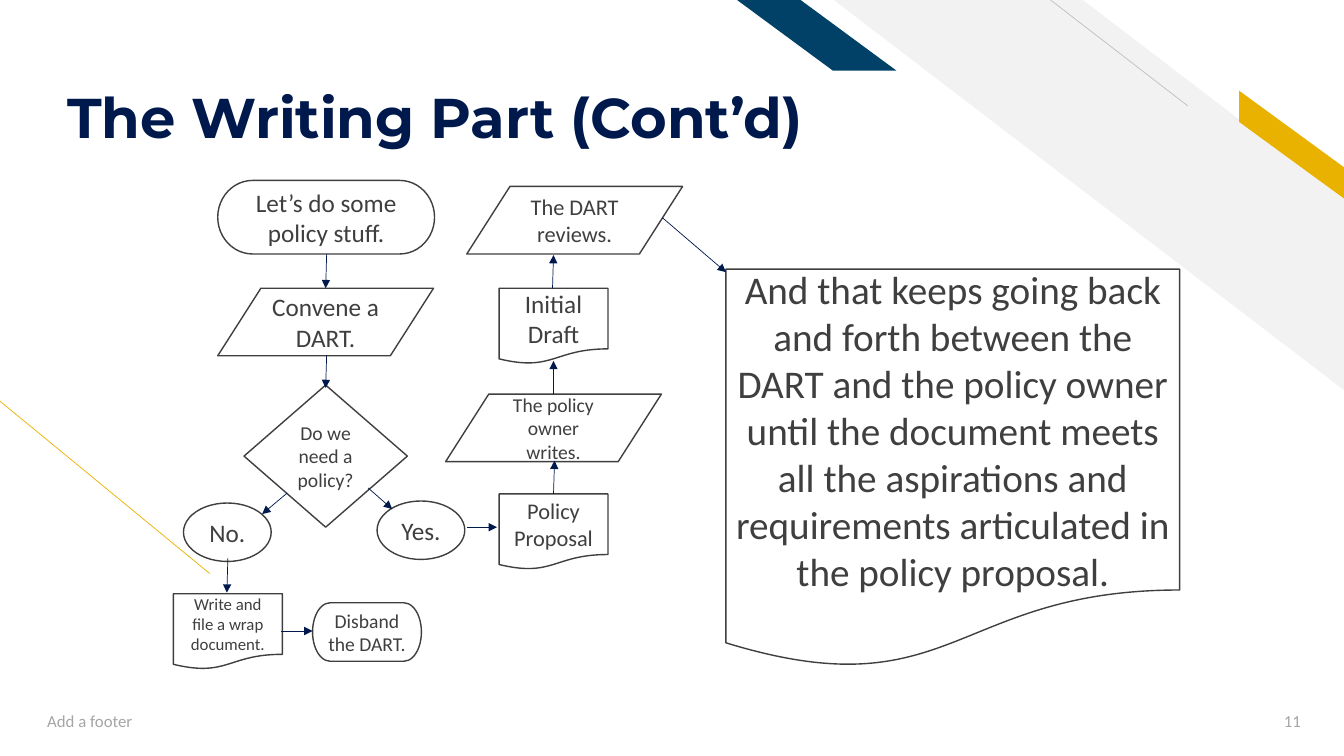
"""Build the policy-writing flowchart slide."""
from dataclasses import dataclass

from lxml.etree import SubElement
from pptx import Presentation
from pptx.dml.color import RGBColor
from pptx.enum.shapes import MSO_CONNECTOR, MSO_SHAPE
from pptx.enum.text import MSO_ANCHOR, PP_ALIGN
from pptx.oxml.ns import qn
from pptx.util import Emu, Pt


@dataclass(frozen=True)
class Theme:
    white: str = "FFFFFF"
    navy: str = "00194C"
    blue: str = "014067"
    gold: str = "EAB200"
    pale: str = "F2F2F2"
    rule: str = "BFBFBF"
    ink: str = "3F3F3F"
    muted: str = "A5A5A5"
    heading: str = "Montserrat"
    body: str = "Calibri"
    title_size: int = 40
    huge: int = 28
    large: int = 18
    medium: int = 16
    small: int = 14
    tiny: int = 12


theme = Theme()
PX = 9144


def write(shape, text, size, color, alignment, anchor=MSO_ANCHOR.MIDDLE, name=theme.body):
    frame = shape.text_frame
    frame.word_wrap = True
    frame.vertical_anchor = anchor
    paragraph = frame.paragraphs[0]
    paragraph.text = text
    paragraph.alignment = alignment
    paragraph.font.name = name
    paragraph.font.size = Pt(size)
    paragraph.font.color.rgb = RGBColor.from_string(color)
    return paragraph


def draw_line(start, end, color, arrow=False):
    points = [Emu(value * PX) for value in (*start, *end)]
    connector = slide.shapes.add_connector(MSO_CONNECTOR.STRAIGHT, *points)
    connector.line.color.rgb = RGBColor.from_string(color)
    connector.line.width = Pt(0.5)
    if arrow:
        SubElement(connector.line._get_or_add_ln(), qn("a:tailEnd"), type="triangle")
    SubElement(connector._element.spPr, qn("a:effectLst"))


presentation = Presentation()
presentation.slide_width = Emu(1333 * PX)
presentation.slide_height = Emu(750 * PX)
slide = presentation.slides.add_slide(presentation.slide_layouts[6])

draw_line((208, 569), (0, 398), theme.gold)
bands = [
    (theme.pale, [(827, 0), (1074, 0), (1333, 198), (1333, 387)]),
    (theme.gold, [(1229, 90), (1333, 166), (1333, 197), (1229, 121)]),
    (theme.blue, [(731, 0), (794, 0), (889, 70), (826, 70)]),
]
for color, corners in bands:
    builder = slide.shapes.build_freeform(*corners[0], scale=PX)
    builder.add_line_segments(corners[1:], close=True)
    band = builder.convert_to_shape()
    band.shadow.inherit = False
    band.fill.solid()
    band.fill.fore_color.rgb = RGBColor.from_string(color)
    band.line.fill.background()
draw_line((1178, 105), (1042, 0), theme.rule)

title = slide.shapes.add_textbox(*(Emu(value * PX) for value in (57, 23, 911, 126)))
title.text_frame.margin_bottom = 0
heading = write(title, "The Writing Part (Cont’d)", theme.title_size, theme.navy,
                PP_ALIGN.LEFT, MSO_ANCHOR.BOTTOM, theme.heading)
heading.font.bold = True
heading.line_spacing = 0.9

terminator = MSO_SHAPE.FLOWCHART_TERMINATOR
step = MSO_SHAPE.FLOWCHART_DATA
document = MSO_SHAPE.FLOWCHART_DOCUMENT
nodes = [
    (terminator, (216, 179, 215, 73), "Let’s do some policy stuff.", theme.large),
    (step, (216, 286, 214, 67), "Convene a DART.", theme.large),
    (MSO_SHAPE.DIAMOND, (242, 382, 162, 141), "Do we need a policy?", theme.small),
    (MSO_SHAPE.OVAL, (182, 499, 87, 58), "No.", theme.large),
    (MSO_SHAPE.OVAL, (374, 497, 87, 58), "Yes.", theme.large),
    (document, (172, 589, 108, 75), "Write and file a wrap document.", theme.tiny),
    (terminator, (310, 598, 108, 58), "Disband the DART.", theme.small),
    (document, (495, 490, 108, 75), "Policy Proposal", theme.medium),
    (step, (442, 391, 214, 67), "The policy owner writes.", theme.small),
    (document, (495, 286, 108, 75), "Initial Draft", theme.large),
    (step, (463, 185, 214, 67), "The DART reviews.", theme.medium),
    (document, (720, 267, 450, 397),
     "And that keeps going back and forth between the DART and the policy owner until "
     "the document meets all the aspirations and requirements articulated in the "
     "policy proposal.", theme.huge),
]
for kind, box, text, size in nodes:
    node = slide.shapes.add_shape(kind, *(Emu(value * PX) for value in box))
    node.shadow.inherit = False
    node.fill.solid()
    node.fill.fore_color.rgb = RGBColor.from_string(theme.white)
    node.line.color.rgb = RGBColor.from_string(theme.ink)
    node.line.width = Pt(1)
    write(node, text, size, theme.ink, PP_ALIGN.CENTER)

arrows = [
    ((324, 252), (323, 286)),
    ((324, 352), (323, 385)),
    ((285, 489), (260, 510)),
    ((365, 484), (389, 505)),
    ((226, 554), (225, 588)),
    ((279, 626), (310, 626)),
    ((463, 523), (493, 523)),
    ((549, 490), (550, 457)),
    ((549, 391), (549, 358)),
    ((548, 286), (549, 253)),
    ((657, 216), (720, 270)),
]
for start, end in arrows:
    draw_line(start, end, theme.navy, arrow=True)

footers = [
    ((37, 695, 450, 40), "Add a footer", PP_ALIGN.LEFT),
    ((1219, 695, 81, 40), "11", PP_ALIGN.RIGHT),
]
for box, text, alignment in footers:
    footer = slide.shapes.add_textbox(*(Emu(value * PX) for value in box))
    write(footer, text, theme.tiny, theme.muted, alignment)

presentation.save("out.pptx")
